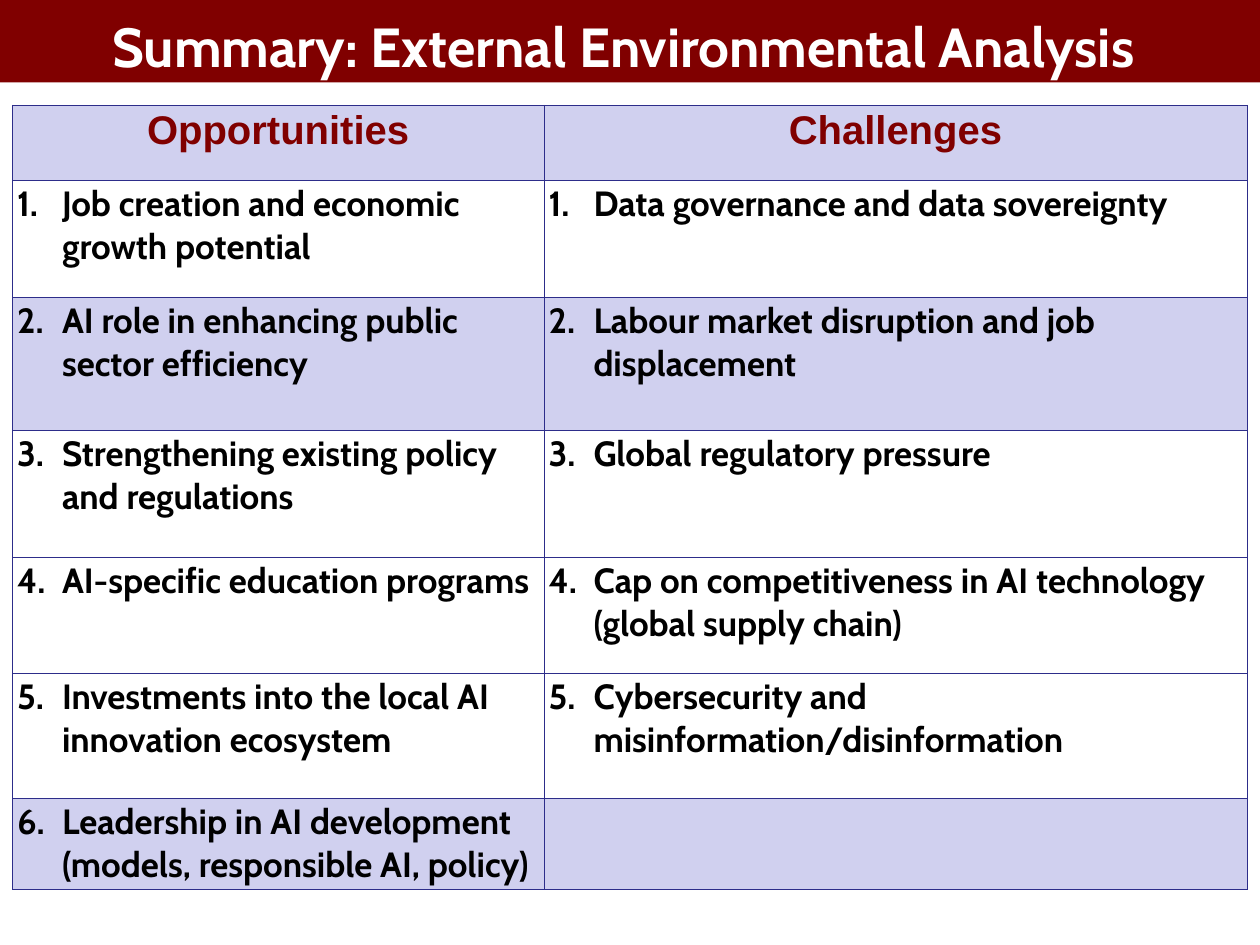
from itertools import zip_longest

from lxml.etree import SubElement
from pptx import Presentation
from pptx.dml.color import RGBColor
from pptx.enum.shapes import MSO_SHAPE
from pptx.enum.text import MSO_ANCHOR, PP_ALIGN
from pptx.oxml.ns import qn
from pptx.util import Pt

# Content
TITLE = "Summary: External Environmental Analysis "
HEADINGS = ("Opportunities", "Challenges")
OPPORTUNITIES = [
    "Job creation and economic growth potential",
    "AI role in enhancing public sector efficiency",
    "Strengthening existing policy and regulations",
    "AI-specific education programs",
    "Investments into the local AI innovation ecosystem",
    "Leadership in AI development (models, responsible AI, policy)",
]
CHALLENGES = [
    "Data governance and data sovereignty",
    "Labour market disruption and job displacement",
    "Global regulatory pressure",
    "Cap on competitiveness in AI technology (global supply chain)",
    "Cybersecurity and misinformation/disinformation",
]

# Format and layout, in points
COLORS = {"maroon": "800000", "lavender": "D0D0EF", "white": "FFFFFF",
          "black": "000000", "navy": "2D2D8A"}
TITLE_FONT = {"name": "Cabin", "size": Pt(44), "bold": True}
HEADING_FONT = {"name": "Arial", "size": Pt(32), "bold": True}
POINT_FONT = {"name": "Cabin", "size": Pt(28), "bold": True}
CELL_MARGINS = {"margin_left": Pt(3.6), "margin_right": Pt(3.6),
                "margin_top": Pt(2.4), "margin_bottom": Pt(2.4)}
SLIDE_WIDTH, SLIDE_HEIGHT = 1008, 756
BANNER_HEIGHT = 66
TABLE_LEFT, TABLE_TOP = 10, 84.2
COLUMN_WIDTHS = (425.2, 562.6)
ROW_HEIGHTS = (60, 93.6, 106.4, 101.6, 92.8, 100, 73)
SHADED_ROWS = (0, 2, 6)
NUMBER_INDENT = 36
BORDER_WIDTH = 0.75


def rgb(color):
    return RGBColor.from_string(COLORS[color])


def set_all(target, values):
    for attribute, value in values.items():
        setattr(target, attribute, value)


def fill_with(target, color):
    target.fill.solid()
    target.fill.fore_color.rgb = rgb(color)


def write(frame, text, font, color, align):
    paragraph = frame.paragraphs[0]
    paragraph.alignment = align
    run = paragraph.add_run()
    run.text = text
    set_all(run.font, font)
    run.font.color.rgb = rgb(color)
    return paragraph


def add_number(paragraph, number):
    properties = paragraph._p.get_or_add_pPr()
    properties.set("marL", str(Pt(NUMBER_INDENT)))
    properties.set("indent", str(-Pt(NUMBER_INDENT)))
    SubElement(properties, qn("a:buFont"), typeface="+mj-lt")
    SubElement(properties, qn("a:buAutoNum"), type="arabicPeriod", startAt=str(number))


def add_borders(cell):
    properties = cell._tc.get_or_add_tcPr()
    for position, side in enumerate(("lnL", "lnR", "lnT", "lnB")):
        line = SubElement(properties, qn(f"a:{side}"), w=str(Pt(BORDER_WIDTH)))
        paint = SubElement(line, qn("a:solidFill"))
        SubElement(paint, qn("a:srgbClr"), val=COLORS["navy"])
        properties.insert(position, line)


presentation = Presentation()
presentation.slide_width, presentation.slide_height = Pt(SLIDE_WIDTH), Pt(SLIDE_HEIGHT)
slide = presentation.slides.add_slide(presentation.slide_layouts[6])

# Title banner
banner = slide.shapes.add_shape(MSO_SHAPE.RECTANGLE, 0, 0, Pt(SLIDE_WIDTH), Pt(BANNER_HEIGHT))
banner.shadow.inherit = False
banner.line.fill.background()
fill_with(banner, "maroon")
banner.text_frame.word_wrap = True
banner.text_frame.vertical_anchor = MSO_ANCHOR.BOTTOM
write(banner.text_frame, TITLE, TITLE_FONT, "white", PP_ALIGN.CENTER)

# Table grid
summary = slide.shapes.add_table(
    len(ROW_HEIGHTS), len(COLUMN_WIDTHS), Pt(TABLE_LEFT), Pt(TABLE_TOP),
    Pt(sum(COLUMN_WIDTHS)), Pt(sum(ROW_HEIGHTS))).table
for column, width in zip(summary.columns, COLUMN_WIDTHS):
    column.width = Pt(width)
for row, height in zip(summary.rows, ROW_HEIGHTS):
    row.height = Pt(height)

# Headings and numbered points
rows = [HEADINGS, *zip_longest(OPPORTUNITIES, CHALLENGES)]
for number, entries in enumerate(rows):
    for column, entry in enumerate(entries):
        cell = summary.cell(number, column)
        set_all(cell, CELL_MARGINS)
        fill_with(cell, "lavender" if number in SHADED_ROWS else "white")
        add_borders(cell)
        if number == 0:
            write(cell.text_frame, entry, HEADING_FONT, "maroon", PP_ALIGN.CENTER)
        elif entry:
            point = write(cell.text_frame, entry, POINT_FONT, "black", PP_ALIGN.LEFT)
            add_number(point, number)

presentation.save("out.pptx")
